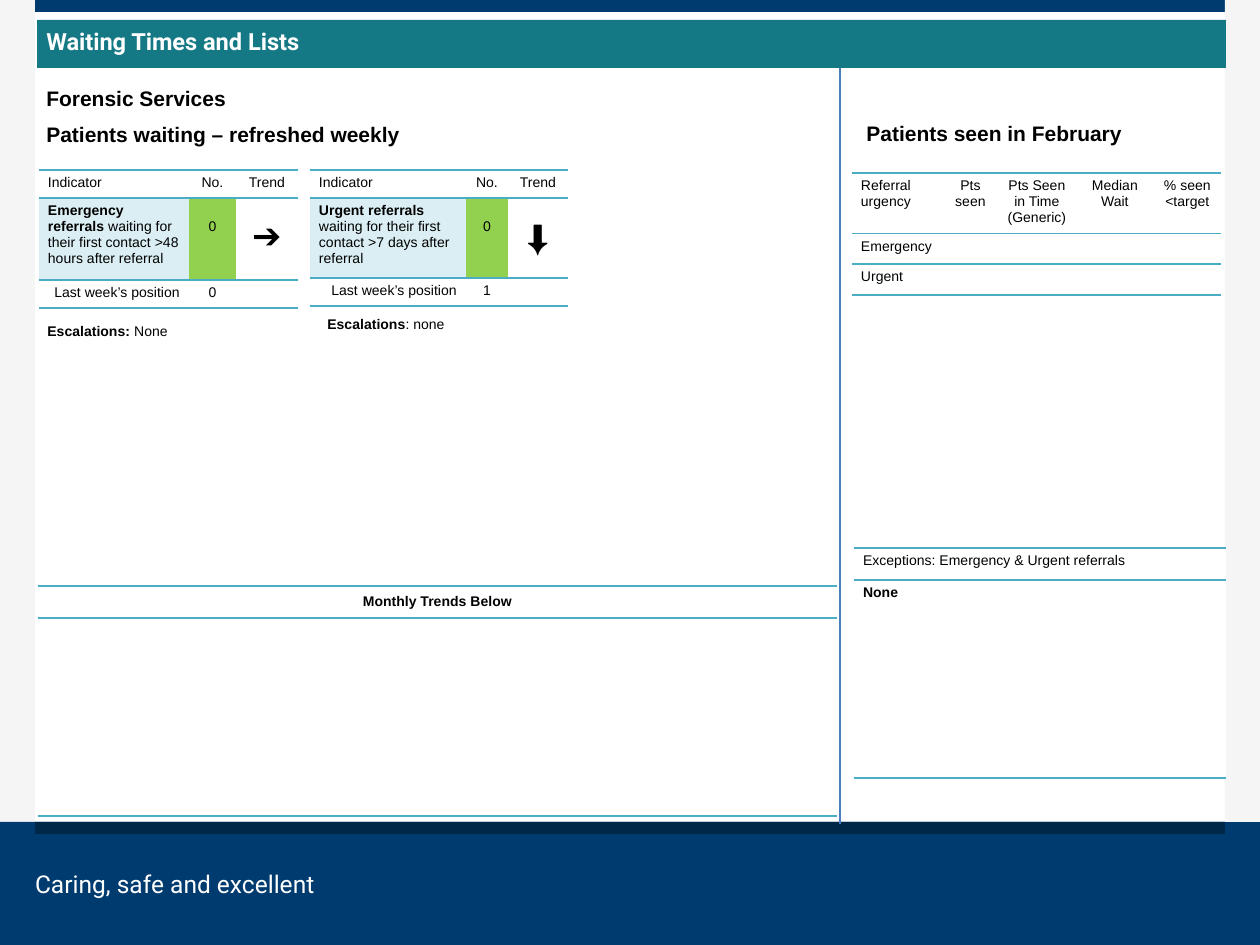
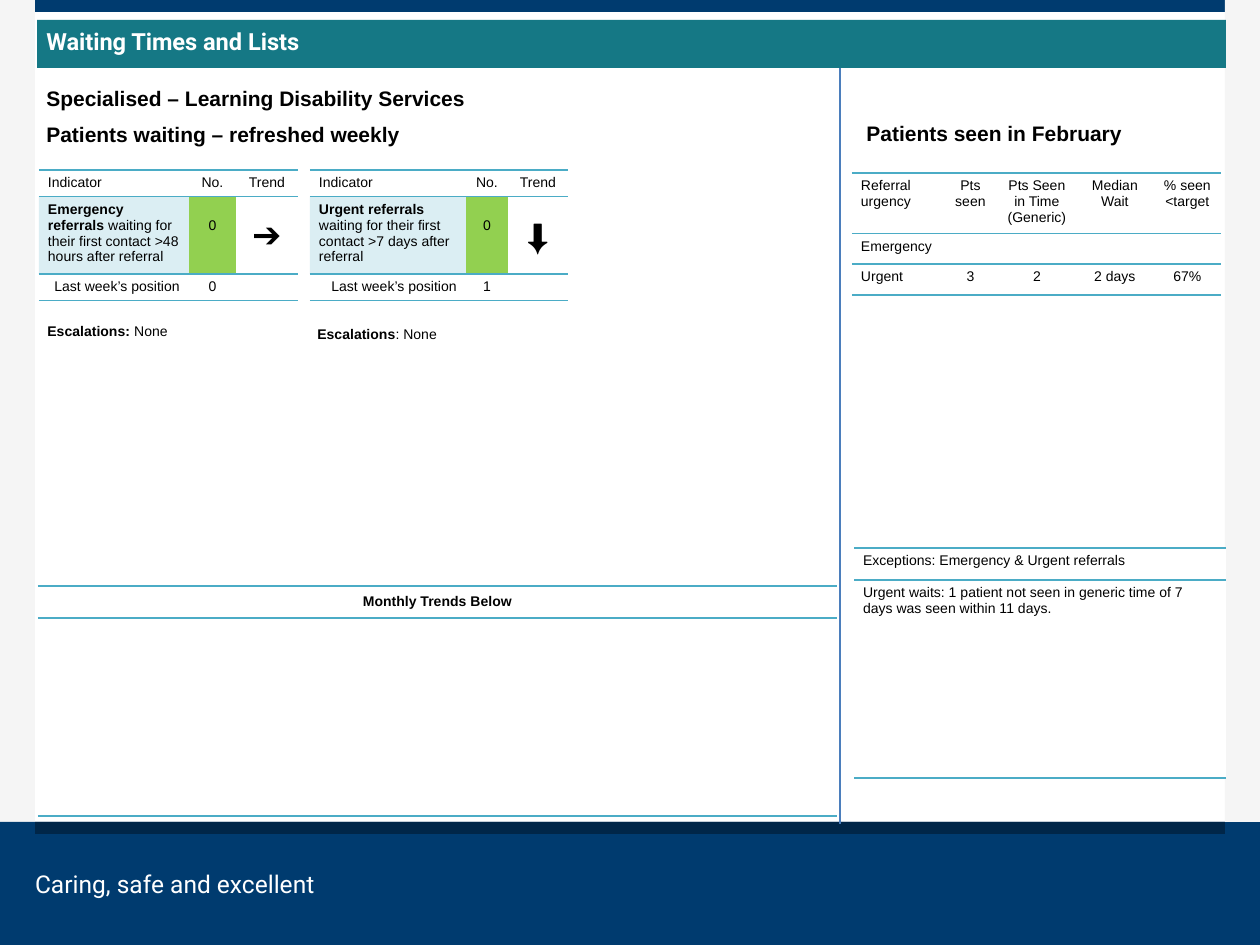
import dataclasses

import lxml.etree
import pptx
import pptx.dml.color
import pptx.enum.shapes
import pptx.enum.text
import pptx.oxml.ns
import pptx.util

SCALE = 914400 / 126
COLORS = {
    "navy": "003B6F",
    "shade": "002648",
    "margin": "F5F5F5",
    "teal": "157885",
    "rule": "4BACC6",
    "divider": "4B7EBC",
    "green": "92D050",
    "white": "FFFFFF",
    "black": "000000",
}
NO_STYLE = "{2D5ABB26-0587-4C30-8999-92F81FD0307C}"
ALIGN = pptx.enum.text.PP_ALIGN
MIDDLE = pptx.enum.text.MSO_ANCHOR.MIDDLE
LEFT_EDGE, RIGHT_EDGE, FOOTER_TOP = 35, 1225, 822


@dataclasses.dataclass
class Entry:
    spans: tuple = ()
    align: object = ALIGN.LEFT
    fill: str = "white"
    alpha: int = 100
    size: int = 8
    top: int = 5
    anchor: object = None


def px(length):
    return pptx.util.Emu(round(length * SCALE))


def rgb(name):
    return pptx.dml.color.RGBColor.from_string(COLORS[name])


def add_spans(para, spans, size, font="Arial", color="black"):
    for text, bold in spans:
        span = para.add_run()
        span.text = text
        span.font.name = font
        span.font.size = pptx.util.Pt(size)
        span.font.bold = bold
        span.font.color.rgb = rgb(color)


def add_band(page, left, top, width, height, color):
    band = page.shapes.add_shape(
        pptx.enum.shapes.MSO_SHAPE.RECTANGLE, px(left), px(top), px(width), px(height)
    )
    band.shadow.inherit = False
    band.fill.solid()
    band.fill.fore_color.rgb = rgb(color)
    band.line.fill.background()


def add_text(page, left, top, width, height, spans, size, inset=True, **style):
    box = page.shapes.add_textbox(px(left), px(top), px(width), px(height))
    frame = box.text_frame
    frame.word_wrap = True
    frame.auto_size = pptx.enum.text.MSO_AUTO_SIZE.SHAPE_TO_FIT_TEXT
    if not inset:
        frame.margin_left = frame.margin_right = 0
        frame.margin_top = frame.margin_bottom = 0
    add_spans(frame.paragraphs[0], spans, size, **style)


def add_divider(page, x, top, bottom):
    line = page.shapes.add_connector(
        pptx.enum.shapes.MSO_CONNECTOR.STRAIGHT, px(x), px(top), px(x), px(bottom)
    )
    line.line.color.rgb = rgb("divider")
    line.line.width = pptx.util.Pt(0.75)
    properties = line._element.spPr
    lxml.etree.SubElement(properties, pptx.oxml.ns.qn("a:effectLst"))


def add_rules(cell, sides):
    qn = pptx.oxml.ns.qn
    properties = cell._tc.get_or_add_tcPr()
    for index, side in enumerate(sides):
        rule = lxml.etree.Element(qn(f"a:ln{side}"), w=str(pptx.util.Pt(1)))
        fill = lxml.etree.SubElement(rule, qn("a:solidFill"))
        lxml.etree.SubElement(fill, qn("a:srgbClr"), val=COLORS["rule"])
        properties.insert(index, rule)


def fill_cell(cell, entry):
    qn = pptx.oxml.ns.qn
    cell.margin_left = cell.margin_right = px(9)
    cell.margin_top, cell.margin_bottom = px(entry.top), px(5)
    if entry.anchor is not None:
        cell.vertical_anchor = entry.anchor
    cell.fill.solid()
    cell.fill.fore_color.rgb = rgb("white" if entry.alpha == 0 else entry.fill)
    if entry.alpha < 100:
        color = cell._tc.tcPr.find(".//" + qn("a:srgbClr"))
        lxml.etree.SubElement(color, qn("a:alpha"), val=str(entry.alpha * 1000))
    para = cell.text_frame.paragraphs[0]
    para.alignment = entry.align
    add_spans(para, entry.spans, entry.size)
    if not entry.spans:
        lxml.etree.SubElement(para._p, qn("a:endParaRPr"), sz="800")


def add_grid(page, left, top, widths, heights, rows):
    frame = page.shapes.add_table(
        len(heights), len(widths), px(left), px(top), px(sum(widths)), px(sum(heights))
    )
    table = frame.table
    table.first_row = table.horz_banding = False
    table._tbl.tblPr.find(pptx.oxml.ns.qn("a:tableStyleId")).text = NO_STYLE
    for column, width in zip(table.columns, widths):
        column.width = px(width)
    last = len(heights) - 1
    for index, (height, entries) in enumerate(zip(heights, rows)):
        table.rows[index].height = px(height)
        sides = "TB" if index == 0 else "T" if index == 1 else ""
        if index == last:
            sides += "B"
        for column, entry in enumerate(entries):
            cell = table.cell(index, column)
            fill_cell(cell, entry)
            add_rules(cell, sides)


def label(text, bold=False):
    return Entry(((text, bold),))


def centred(text, **style):
    spans = ((text, False),) if text else ()
    return Entry(spans, ALIGN.CENTER, **style)


def add_indicator(page, left, widths, heights, referral, wait, arrow, arrow_top, last_week):
    description = ((referral, True), (wait, False))
    rows = [
        [label("Indicator"), centred("No."), centred("Trend")],
        [
            Entry(description, fill="rule", alpha=20),
            centred("0", fill="green", top=21),
            centred(arrow, size=20, top=arrow_top),
        ],
        [
            Entry((("Last week’s position", False),), ALIGN.RIGHT),
            centred(last_week),
            Entry(),
        ],
    ]
    add_grid(page, left, 170, widths, heights, rows)


def add_seen_table(page, urgent):
    headings = ["Pts seen", "Pts Seen in Time (Generic)", "Median Wait", "% seen <target"]
    lines = [
        ("Referral urgency", headings),
        ("Emergency", [""] * len(headings)),
        ("Urgent", urgent),
    ]
    rows = [[label(name)] + [centred(value) for value in values] for name, values in lines]
    add_grid(page, 852, 173, [91, 55, 78, 78, 67], [60, 31, 31], rows)


def add_frame(page):
    inner = RIGHT_EDGE - LEFT_EDGE
    add_band(page, 0, 0, LEFT_EDGE, FOOTER_TOP, "margin")
    add_band(page, 0, FOOTER_TOP, 1260, 945 - FOOTER_TOP, "navy")
    add_band(page, LEFT_EDGE, FOOTER_TOP, inner, 12, "shade")
    add_band(page, LEFT_EDGE, 0, inner, 12, "navy")
    add_band(page, RIGHT_EDGE, 0, 1260 - RIGHT_EDGE, FOOTER_TOP, "margin")
    add_text(page, 35, 869, 387, 30, [("Caring, safe and excellent", False)], 14,
             inset=False, font="Roboto", color="white")
    add_band(page, 37, 20, 1189, 48, "teal")
    add_text(page, 34, 21, 1244, 71, [("Waiting Times and Lists", True)], 13.5,
             font="Roboto", color="white")


def add_escalations(page, left, top, spans):
    add_text(page, left, top, 275, 30, spans, 8)


def add_report(deck, service, emergency_rows, urgent_rows, urgent_note, urgent_seen, exception):
    page = deck.slides.add_slide(deck.slide_layouts[6])
    add_frame(page)
    trends = Entry((("Monthly Trends Below", True),), ALIGN.CENTER, anchor=MIDDLE)
    add_grid(page, 38, 586, [799], [32, 198], [[trends], [Entry()]])
    add_text(page, 34, 79, 1184, 38, [(service, True)], 12)
    add_text(page, 34, 115, 833, 38, [("Patients waiting – refreshed weekly", True)], 12)
    add_indicator(page, 39, [150, 47, 62], emergency_rows, "Emergency referrals ",
                  "waiting for their first contact >48 hours after referral", "➔", 19, "0")
    add_indicator(page, 310, [156, 42, 60], urgent_rows, "Urgent referrals ",
                  "waiting for their first contact >7 days after referral", "⬇", 21, "1")
    add_divider(page, 840, 68, 824)
    add_escalations(page, 35, 316, [("Escalations: ", True), ("None", False)])
    left, top, note = urgent_note
    add_escalations(page, left, top, [("Escalations", True), (note, False)])
    add_text(page, 854, 114, 348, 38, [("Patients seen in February", True)], 12)
    add_seen_table(page, urgent_seen)
    add_grid(page, 854, 548, [372], [32, 198],
             [[label("Exceptions: Emergency & Urgent referrals")], [exception]])


def main():
    deck = pptx.Presentation()
    deck.slide_width, deck.slide_height = px(1260), px(945)
    add_report(deck, "Forensic Services", [28, 82, 28], [28, 80, 28],
               (315, 309, ": none"), [""] * 4, label("None", True))
    add_report(deck, "Specialised – Learning Disability Services", [26, 76, 26], [26, 76, 26],
               (305, 319, ": None"), ["3", "2", "2 days", "67%"],
               label("Urgent waits: 1 patient not seen in generic time of 7 days "
                     "was seen within 11 days."))
    deck.save("out.pptx")


if __name__ == "__main__":
    main()
